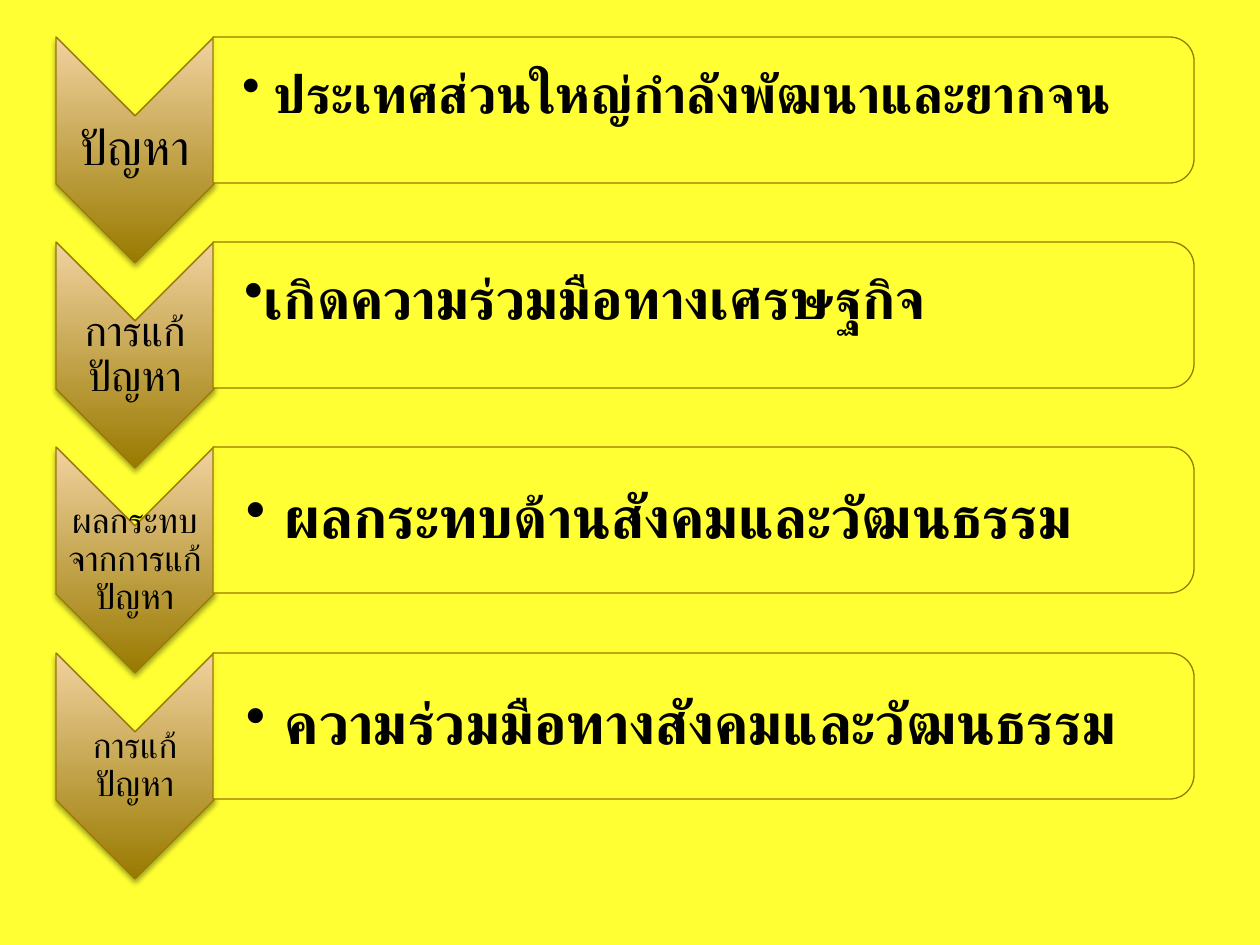
"""Build a slide of four chevron steps, each with a labelled bullet panel."""
from dataclasses import dataclass

from lxml import etree
from pptx import Presentation
from pptx import util as u
from pptx.dml.color import RGBColor
from pptx.enum import lang, shapes, text
from pptx.oxml import parse_xml
from pptx.oxml.ns import nsdecls, qn

STEPS = [
    dict(label="ปัญหา", label_size=28, runs=[(" ", False), ("ประเทศส่วนใหญ่กำลังพัฒนาและยากจน", True)],
         size=30, inset=29, bottom=39, hanging=0, spacing=1.0),
    dict(label="การแก้ปัญหา", label_size=24, runs=[("เกิดความร่วมมือทางเศรษฐกิจ", True)],
         size=32, inset=31, bottom=39, hanging=0, spacing=1.0),
    dict(label="ผลกระทบจากการแก้ปัญหา", label_size=20, runs=[("ผลกระทบด้านสังคมและวัฒนธรรม", True)],
         size=33, inset=33, bottom=3, hanging=39, spacing=0.9),
    dict(label="การแก้ปัญหา", label_size=20, runs=[("ความร่วมมือทางสังคมและวัฒนธรรม", True)],
         size=33, inset=33, bottom=3, hanging=39, spacing=0.9),
]


@dataclass(frozen=True)
class Theme:
    background: RGBColor = RGBColor.from_string("FFFF33")
    dark: RGBColor = RGBColor.from_string("997A00")
    light: RGBColor = RGBColor.from_string("F1D29F")
    ink: RGBColor = RGBColor.from_string("000000")
    font: str = "Arial"
    line: float = 0.75


THEME = Theme()
SLIDE_WIDTH, SLIDE_HEIGHT = 1260, 945
FIRST_TOP, THREE_STEPS = 37, 616
CHEVRON_LEFT, CHEVRON_WIDTH, CHEVRON_HEIGHT = 56, 158, 226
PANEL_LEFT, PANEL_WIDTH, PANEL_HEIGHT = 213, 981, 146


def px(length):
    return u.Emu(round(length * 914400 / 126))


def add_turned(slide, kind, left, top, width, height):
    """Add a shape turned a quarter that covers the given area."""
    shift = (width - height) / 2
    shape = slide.shapes.add_shape(kind, px(left + shift), px(top - shift), px(height), px(width))
    shape.rotation = 90
    shape.shadow.inherit = False
    shape.line.color.rgb = THEME.dark
    shape.line.width = u.Pt(THEME.line)
    return shape


def add_chevron(slide, top):
    shape = add_turned(slide, shapes.MSO_SHAPE.CHEVRON, CHEVRON_LEFT, top, CHEVRON_WIDTH, CHEVRON_HEIGHT)
    shape.fill.gradient()
    shape.fill.gradient_angle = 90
    for stop, color in zip(shape.fill.gradient_stops, (THEME.dark, THEME.light)):
        stop.color.rgb = color
    properties = shape.element.spPr
    properties.find(qn("a:gradFill")).set("rotWithShape", "0")
    properties.find(qn("a:effectLst")).append(parse_xml(
        f'<a:outerShdw {nsdecls("a")} blurRad="{u.Pt(3.1)}" dist="{u.Pt(1.8)}" dir="5400000" '
        f'rotWithShape="0"><a:srgbClr val="{THEME.ink}"><a:alpha val="35000"/></a:srgbClr></a:outerShdw>'))


def add_panel(slide, top):
    shape = add_turned(slide, shapes.MSO_SHAPE.ROUND_2_SAME_RECTANGLE,
                       PANEL_LEFT, top, PANEL_WIDTH, PANEL_HEIGHT)
    shape.fill.solid()
    shape.fill.fore_color.rgb = THEME.background
    color = shape.element.spPr.find(qn("a:solidFill"))[0]
    etree.SubElement(color, qn("a:alpha")).set("val", "90000")


def add_text(slide, area, insets, runs, size, spacing):
    frame = slide.shapes.add_textbox(*map(px, area)).text_frame
    frame.word_wrap = True
    frame.vertical_anchor = text.MSO_ANCHOR.MIDDLE
    frame.margin_left, frame.margin_top, frame.margin_right, frame.margin_bottom = map(px, insets)
    paragraph = frame.paragraphs[0]
    paragraph.line_spacing = spacing
    for words, bold in runs:
        run = paragraph.add_run()
        run.text = words
        run.font.name = THEME.font
        run.font.size = u.Pt(size)
        run.font.bold = bold
        run.font.color.rgb = THEME.ink
        run.font.language_id = lang.MSO_LANGUAGE_ID.THAI
    return paragraph


def add_bullet(paragraph, hanging):
    properties = paragraph._p.get_or_add_pPr()
    properties.set("marL", str(px(hanging)))
    properties.set("indent", str(px(-hanging)))
    etree.SubElement(properties, qn("a:buChar")).set("char", "•")


def add_step(slide, step, top):
    add_chevron(slide, top)
    label = add_text(slide, (CHEVRON_LEFT, top + 79, CHEVRON_WIDTH, 68), (2, 2, 2, 2),
                     [(step["label"], False)], step["label_size"], 0.9)
    label.alignment = text.PP_ALIGN.CENTER
    add_panel(slide, top)
    body = add_text(slide, (PANEL_LEFT, top + 7, 974, 132), (step["inset"], 3, 3, step["bottom"]),
                    step["runs"], step["size"], step["spacing"])
    add_bullet(body, step["hanging"])


def main():
    presentation = Presentation()
    presentation.slide_width, presentation.slide_height = px(SLIDE_WIDTH), px(SLIDE_HEIGHT)
    slide = presentation.slides.add_slide(presentation.slide_layouts[6])
    slide.background.fill.solid()
    slide.background.fill.fore_color.rgb = THEME.background
    for index, step in enumerate(STEPS):
        add_step(slide, step, FIRST_TOP + THREE_STEPS * index // 3)
    presentation.save("out.pptx")


if __name__ == "__main__":
    main()
